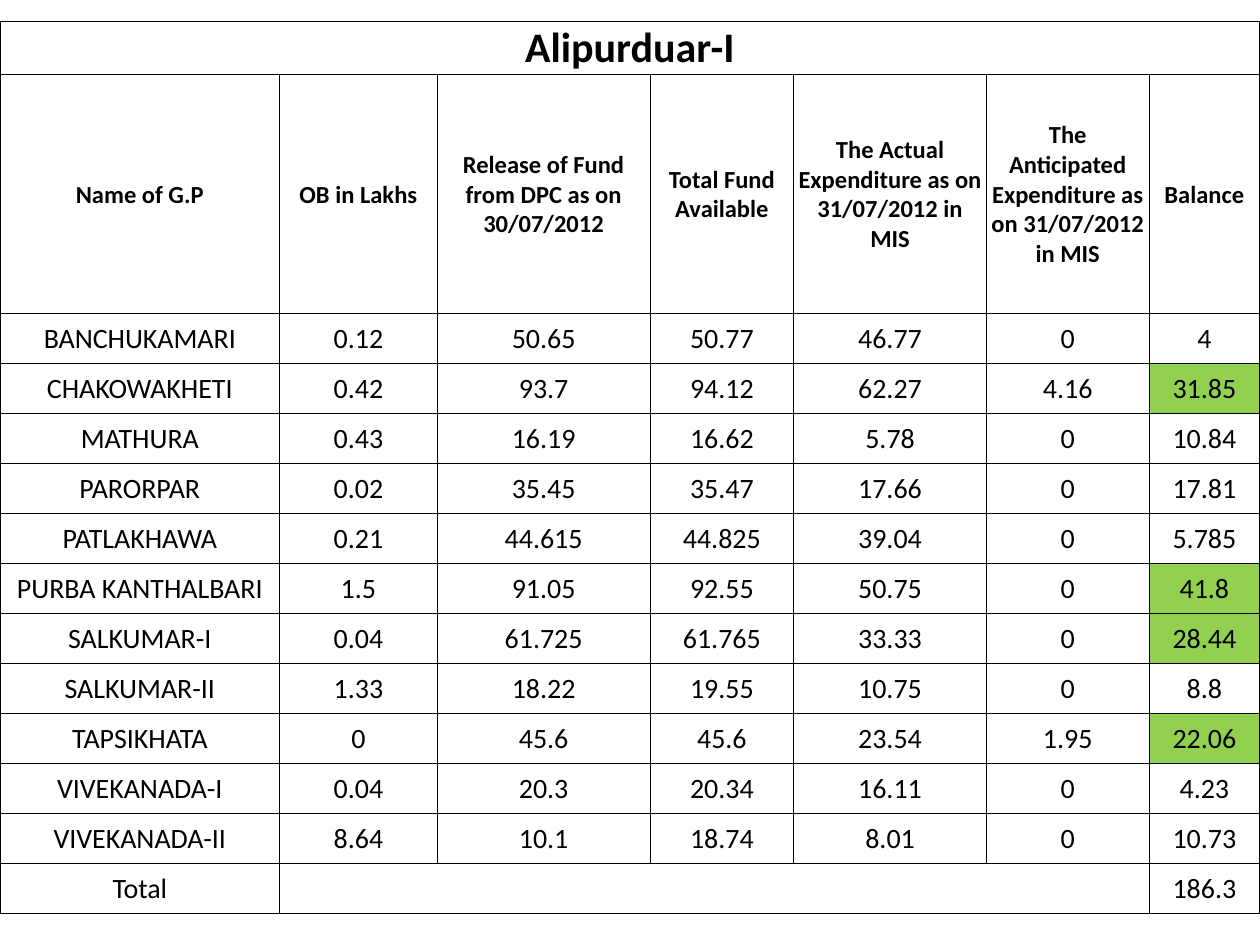
import pptx
import pptx.dml.color
import pptx.enum.text
import pptx.oxml
import pptx.oxml.ns
import pptx.util
from pptx.util import Inches, Pt

BLACK = pptx.dml.color.RGBColor(0x00, 0x00, 0x00)
GREEN = pptx.dml.color.RGBColor(0x92, 0xD0, 0x50)

TITLE = "Alipurduar-I"
HEADINGS = [
    "Name of G.P", "OB in Lakhs", "Release of Fund from DPC as on 30/07/2012",
    "Total Fund Available", "The Actual Expenditure as on 31/07/2012 in MIS",
    "The Anticipated Expenditure as on 31/07/2012 in MIS", "Balance",
]
FUNDS = [
    ["BANCHUKAMARI", "0.12", "50.65", "50.77", "46.77", "0", "4"],
    ["CHAKOWAKHETI", "0.42", "93.7", "94.12", "62.27", "4.16", "31.85"],
    ["MATHURA", "0.43", "16.19", "16.62", "5.78", "0", "10.84"],
    ["PARORPAR", "0.02", "35.45", "35.47", "17.66", "0", "17.81"],
    ["PATLAKHAWA", "0.21", "44.615", "44.825", "39.04", "0", "5.785"],
    ["PURBA KANTHALBARI", "1.5", "91.05", "92.55", "50.75", "0", "41.8"],
    ["SALKUMAR-I", "0.04", "61.725", "61.765", "33.33", "0", "28.44"],
    ["SALKUMAR-II", "1.33", "18.22", "19.55", "10.75", "0", "8.8"],
    ["TAPSIKHATA", "0", "45.6", "45.6", "23.54", "1.95", "22.06"],
    ["VIVEKANADA-I", "0.04", "20.3", "20.34", "16.11", "0", "4.23"],
    ["VIVEKANADA-II", "8.64", "10.1", "18.74", "8.01", "0", "10.73"],
]
HIGH_BALANCE = 20  # balances above this are highlighted
blanks = [""] * 5
rows = [[TITLE, *blanks, ""], HEADINGS, *FUNDS, ["Total", *blanks, "186.3"]]

# Grid
COLUMN_WIDTHS = [2.22, 1.25, 1.69, 1.14, 1.53, 1.29, 0.88]
TABLE_TOP, TABLE_HEIGHT = 0.17, 7.08
TITLE_HEIGHT, HEADING_HEIGHT = 0.42, 1.9
body_height = (TABLE_HEIGHT - TITLE_HEIGHT - HEADING_HEIGHT) / (len(rows) - 2)
row_heights = [TITLE_HEIGHT, HEADING_HEIGHT] + [body_height] * (len(rows) - 2)


def add_borders(cell):
    """Draw a thin black line on all four sides of a cell."""
    properties = cell._tc.get_or_add_tcPr()
    for side in ("lnL", "lnR", "lnT", "lnB"):
        properties.append(pptx.oxml.parse_xml(
            f'<a:{side} {pptx.oxml.ns.nsdecls("a")} w="{Pt(0.5)}">'
            f'<a:solidFill><a:srgbClr val="{BLACK}"/></a:solidFill></a:{side}>'))


# Slide
presentation = pptx.Presentation()
presentation.slide_width = Inches(10)
presentation.slide_height = Inches(7.5)
slide = presentation.slides.add_slide(presentation.slide_layouts[6])

# Table across the full slide width
table = slide.shapes.add_table(
    len(rows), len(COLUMN_WIDTHS), 0, Inches(TABLE_TOP),
    presentation.slide_width, Inches(TABLE_HEIGHT)).table
table.first_row = table.horz_banding = False
for column, width in zip(table.columns, COLUMN_WIDTHS):
    column.width = Inches(width)
for row, height in zip(table.rows, row_heights):
    row.height = Inches(height)

# Cells
last_row, last_column = len(rows) - 1, len(COLUMN_WIDTHS) - 1
for row_index, texts in enumerate(rows):
    size = {0: 24, 1: 14}.get(row_index, 16)
    for column_index, text in enumerate(texts):
        cell = table.cell(row_index, column_index)
        cell.margin_left = cell.margin_right = cell.margin_top = Inches(0.01)
        cell.margin_bottom = 0
        cell.vertical_anchor = pptx.enum.text.MSO_ANCHOR.MIDDLE
        add_borders(cell)
        is_balance = column_index == last_column and 1 < row_index < last_row
        if is_balance and float(text) > HIGH_BALANCE:
            cell.fill.solid()
            cell.fill.fore_color.rgb = GREEN
        else:
            cell.fill.background()
        cell.text = text
        paragraph = cell.text_frame.paragraphs[0]
        paragraph.alignment = pptx.enum.text.PP_ALIGN.CENTER
        paragraph.font.name = "Calibri"
        paragraph.font.size = Pt(size)
        paragraph.font.bold = row_index < 2
        paragraph.font.color.rgb = BLACK

# Title spans every column; the total row is empty between label and balance
table.cell(0, 0).merge(table.cell(0, last_column))
table.cell(last_row, 1).merge(table.cell(last_row, last_column - 1))

presentation.save("out.pptx")
